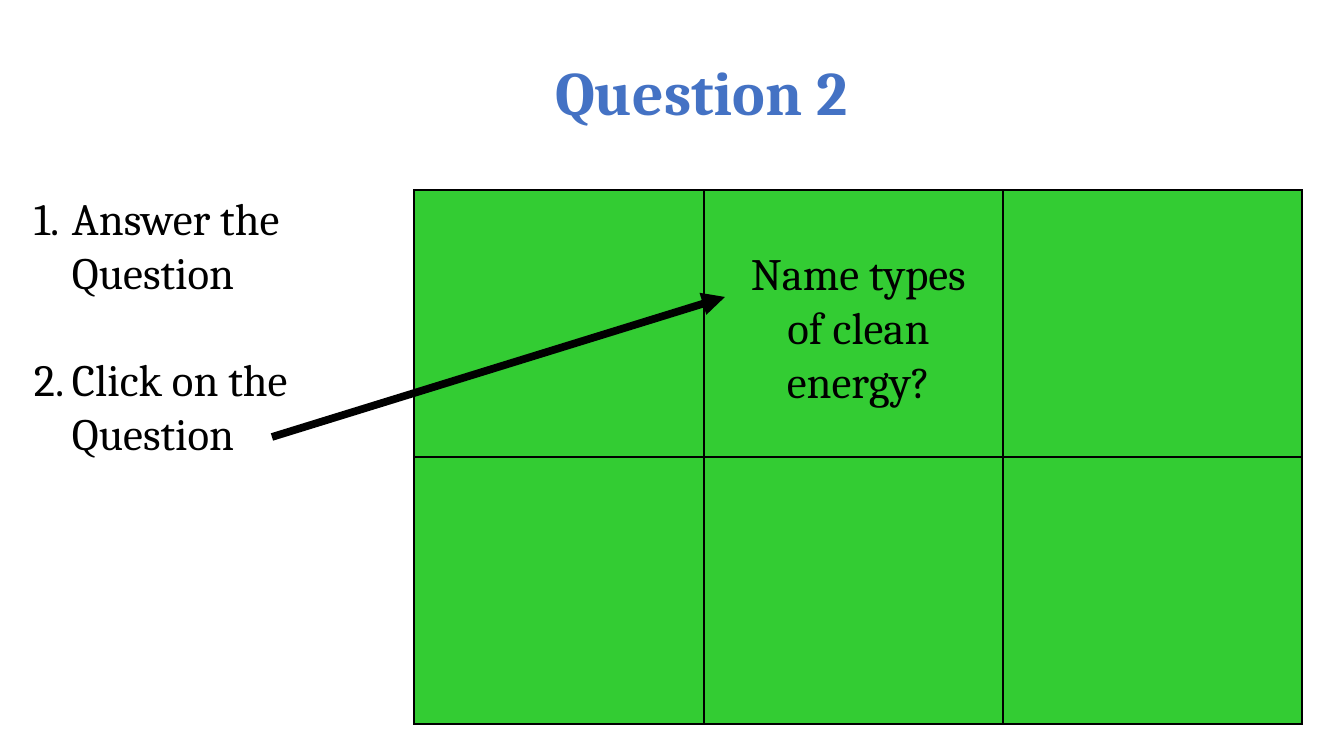
import lxml.etree
import pptx
import pptx.dml.color
import pptx.enum.shapes
import pptx.enum.text
import pptx.oxml.ns
import pptx.util

BLACK = pptx.dml.color.RGBColor(0x00, 0x00, 0x00)
GREEN = pptx.dml.color.RGBColor(0x33, 0xCC, 0x33)
BLUE = pptx.dml.color.RGBColor(0x44, 0x72, 0xC4)
FONT = "Cambria"
EMU_PER_PX = 914400 / 100.8
qn = pptx.oxml.ns.qn


def px(*lengths):
    return [pptx.util.Emu(round(length * EMU_PER_PX)) for length in lengths]


def add_run(paragraph, text, size, color, bold=False):
    run = paragraph.add_run()
    run.text = text
    run.font.name = FONT
    run.font.size = pptx.util.Pt(size)
    run.font.bold = bold
    run.font.color.rgb = color


presentation = pptx.Presentation()
presentation.slide_width, presentation.slide_height = px(1344, 756)
slide = presentation.slides.add_slide(presentation.slide_layouts[5])

# Title
title = slide.shapes.title
title.left, title.top, title.width, title.height = px(122, 38, 1159, 116)
title.text_frame.vertical_anchor = pptx.enum.text.MSO_ANCHOR.MIDDLE
paragraph = title.text_frame.paragraphs[0]
paragraph.alignment = pptx.enum.text.PP_ALIGN.CENTER
paragraph.line_spacing = 0.9
add_run(paragraph, "Question 2", 44, BLUE, bold=True)

# Board of green cells
board = slide.shapes.add_table(2, 3, *px(414, 190, 888, 534)).table
board.first_row = False
board.horz_banding = False
for column, width in zip(board.columns, px(290, 299, 299)):
    column.width = width
for row in board.rows:
    row.height = px(267)[0]
for cell in board.iter_cells():
    cell.fill.solid()
    cell.fill.fore_color.rgb = GREEN
    properties = cell._tc.get_or_add_tcPr()
    for position, side in enumerate(("a:lnL", "a:lnR", "a:lnT", "a:lnB")):
        border = lxml.etree.Element(qn(side), w=str(pptx.util.Pt(1)))
        fill = lxml.etree.SubElement(border, qn("a:solidFill"))
        lxml.etree.SubElement(fill, qn("a:srgbClr"), val=str(BLACK))
        properties.insert(position, border)

# Question in the middle cell
question = slide.shapes.add_textbox(*px(725, 241, 267, 173))
question.text_frame.word_wrap = True
paragraph = question.text_frame.paragraphs[0]
paragraph.alignment = pptx.enum.text.PP_ALIGN.CENTER
add_run(paragraph, "Name types of clean energy?", 32, BLACK)

# Numbered instructions
instructions = slide.shapes.add_textbox(*px(24, 186, 345, 281))
frame = instructions.text_frame
frame.word_wrap = True
indent = px(38)[0]
for number, step in enumerate(("Answer the Question", "Click on the Question")):
    paragraph = frame.add_paragraph() if number else frame.paragraphs[0]
    if number:
        paragraph.space_before = pptx.util.Pt(38)
    add_run(paragraph, step, 32, BLACK)
    properties = paragraph._p.get_or_add_pPr()
    properties.set("marL", str(indent))
    properties.set("indent", str(-indent))
    lxml.etree.SubElement(properties, qn("a:buFontTx"))
    lxml.etree.SubElement(properties, qn("a:buAutoNum"), type="arabicPeriod")

# Arrow from the second step to the question
arrow = slide.shapes.add_connector(
    pptx.enum.shapes.MSO_CONNECTOR.STRAIGHT, *px(272, 437, 725, 297)
)
arrow.line.color.rgb = BLACK
arrow.line.width = pptx.util.Pt(5.5)
lxml.etree.SubElement(arrow.line._get_or_add_ln(), qn("a:tailEnd"), type="triangle")
lxml.etree.SubElement(arrow._element.spPr, qn("a:effectLst"))

presentation.save("out.pptx")
